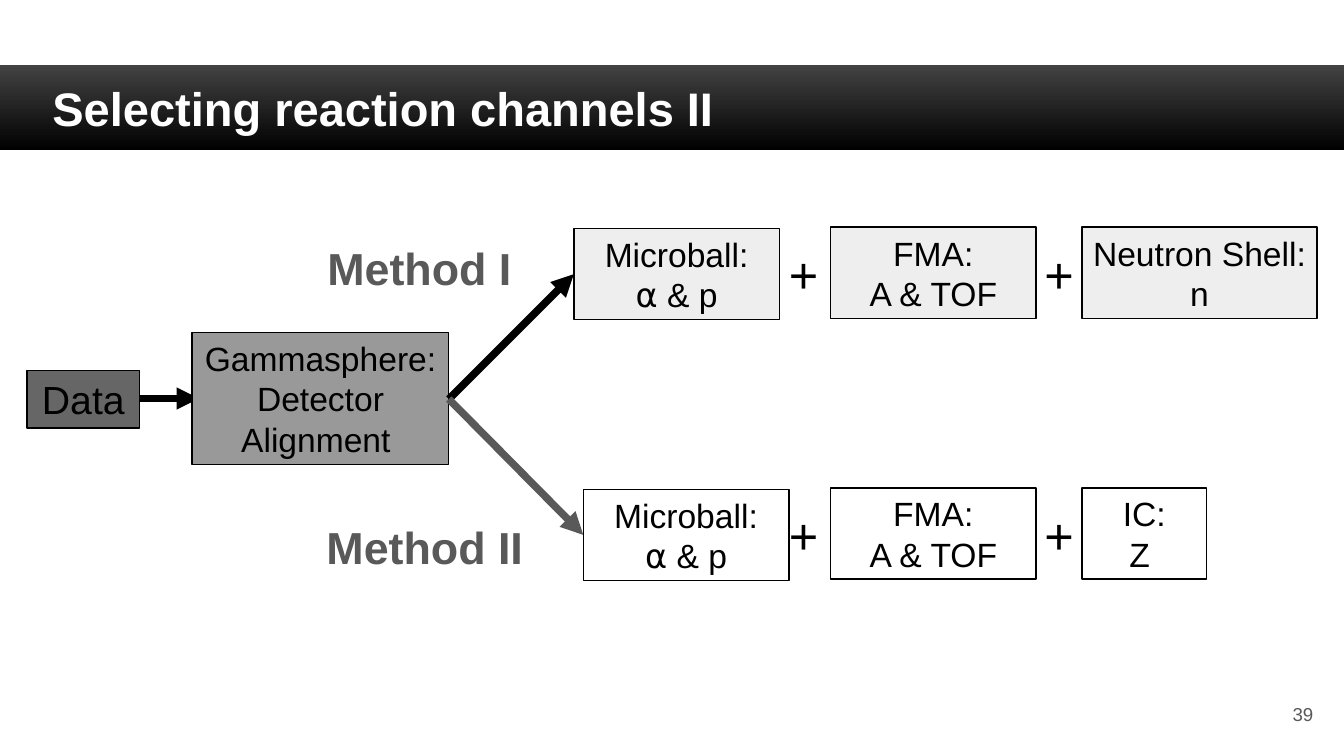
from pptx import Presentation
from pptx.dml.color import RGBColor
from pptx.enum.shapes import MSO_CONNECTOR, MSO_SHAPE
from pptx.enum.text import MSO_ANCHOR, PP_ALIGN
from pptx.oxml.ns import qn
from pptx.util import Inches, Pt
from lxml import etree

RECT = MSO_SHAPE.RECTANGLE
LINE = MSO_CONNECTOR.STRAIGHT
TOP, MID = MSO_ANCHOR.TOP, MSO_ANCHOR.MIDDLE
LEFT, MIDST, RIGHT = PP_ALIGN.LEFT, PP_ALIGN.CENTER, PP_ALIGN.RIGHT

BLACK = RGBColor(0x00, 0x00, 0x00)
WHITE = RGBColor(0xFF, 0xFF, 0xFF)
SLATE = RGBColor(0x59, 0x59, 0x59)
DARK = RGBColor(0x66, 0x66, 0x66)
GREY = RGBColor(0x99, 0x99, 0x99)
PALE = RGBColor(0xEE, 0xEE, 0xEE)
COAL = RGBColor(0x42, 0x42, 0x42)
INK = RGBColor(0x01, 0x01, 0x01)

WIDE = Inches(10)
HIGH = WIDE * 9 // 16
CELL = WIDE / 100
TIGHT = (0.7, 0.4, 0.7, 0.4)
LOOSE = (1, 1, 1, 1)


def cells(*sizes):
    """Turn grid cells into slide lengths."""
    return [round(size * CELL) for size in sizes]


def write(shape, lines, size, ink=BLACK, bold=False, align=MIDST,
          anchor=TOP, inset=TIGHT):
    """Fill a shape with formatted lines of text."""
    frame = shape.text_frame
    left, top, right, foot = cells(*inset)
    look = {"word_wrap": True, "vertical_anchor": anchor, "margin_left": left,
            "margin_top": top, "margin_right": right, "margin_bottom": foot}
    for key, value in look.items():
        setattr(frame, key, value)
    frame.text = "\n".join(lines)
    for para in frame.paragraphs:
        para.alignment = align
        for key, value in {"name": "Arial", "size": Pt(size), "bold": bold}.items():
            setattr(para.font, key, value)
        para.font.color.rgb = ink


def node(slide, box, fill, lines, size=18):
    """Draw an outlined box with centred text."""
    shape = slide.shapes.add_shape(RECT, *cells(*box))
    shape.shadow.inherit = False
    shape.fill.solid()
    shape.fill.fore_color.rgb = fill
    shape.line.color.rgb = BLACK
    shape.line.width = Pt(0.75)
    write(shape, lines, size)


def label(slide, box, text, size, **look):
    """Place one line of free text."""
    write(slide.shapes.add_textbox(*cells(*box)), [text], size, **look)


def arrow(slide, start, end, ink):
    """Draw a thick arrow between two grid points."""
    link = slide.shapes.add_connector(LINE, *cells(*start, *end))
    link.line.color.rgb = ink
    link.line.width = Pt(4)
    props = link.element.spPr
    etree.SubElement(props.find(qn("a:ln")), qn("a:tailEnd"), type="triangle")
    etree.SubElement(props, qn("a:effectLst"))


def banner(slide, box, text):
    """Draw the shaded title band."""
    band = slide.shapes.add_shape(RECT, *cells(*box))
    band.shadow.inherit = False
    band.line.fill.background()
    band.fill.gradient()
    band.fill.gradient_angle = 270
    for stop, ink, place in zip(band.fill.gradient_stops, (COAL, INK), (0, 1)):
        stop.color.rgb = ink
        stop.position = place
    write(band, [text], 25.2, WHITE, True, LEFT, MID, (3.9, 0, 1, 0))


def source(slide, box):
    """Draw the data box and the detector box it feeds."""
    x, y, wide, high = box
    mid = y + high / 2
    node(slide, (x, mid - 2.1, 8.4, 4.3), DARK, ["Data"], 21)
    arrow(slide, (x + 8.4, mid), (x + 12.8, mid), BLACK)
    node(slide, (x + wide - 19.1, y, 19.1, high), GREY,
         ["Gammasphere:", "Detector Alignment "])


def method(slide, box, hub, lead, fill, ink, last):
    """Draw one chain of filters, joined by plus signs, and its arrow."""
    x, y, wide, high = box
    arrow(slide, hub, (x + lead, y + high / 2 + 0.1), ink)
    stages = ((lead, 0.1, 15.3, ["Microball:", "⍺ & p"]),
              (19.1, 0, 15.3, ["FMA:", "A & TOF"]),
              (37.8, 0, wide - 37.8, last))
    for left, drop, span, lines in stages:
        node(slide, (x + left, y + drop, span, high), fill, lines)
    for left in (15.3, 34.3):
        label(slide, (x + left, y + 0.8, 3.8, 5.3), "+", 27, align=LEFT)


def main():
    """Build the slide and save it."""
    deck = Presentation()
    deck.slide_width, deck.slide_height = WIDE, HIGH
    slide = deck.slides.add_slide(deck.slide_layouts[6])
    hub = (33.4, 29.7)
    source(slide, (2, 24.75, 31.4, 9.8))
    method(slide, (42.7, 16.9, 55.3, 6.8), hub, 0, PALE, BLACK,
           ["Neutron Shell:", "n"])
    method(slide, (42.7, 36.3, 47.1, 6.8), hub, 0.7, WHITE, SLATE, ["IC:", "Z "])
    banner(slide, (0, 4.87, 100, 6.3), "Selecting reaction channels II")
    head = {"size": 24, "ink": SLATE, "bold": True, "inset": LOOSE}
    label(slide, (14.8, 16.9, 32.8, 6.1), "Method I", **head)
    label(slide, (15.2, 37.7, 32.8, 6.1), "Method II", **head)
    label(slide, (92.7, 51, 6, 4.3), "39", 10, ink=SLATE, align=RIGHT,
          anchor=MID, inset=LOOSE)
    deck.save("out.pptx")


if __name__ == "__main__":
    main()
